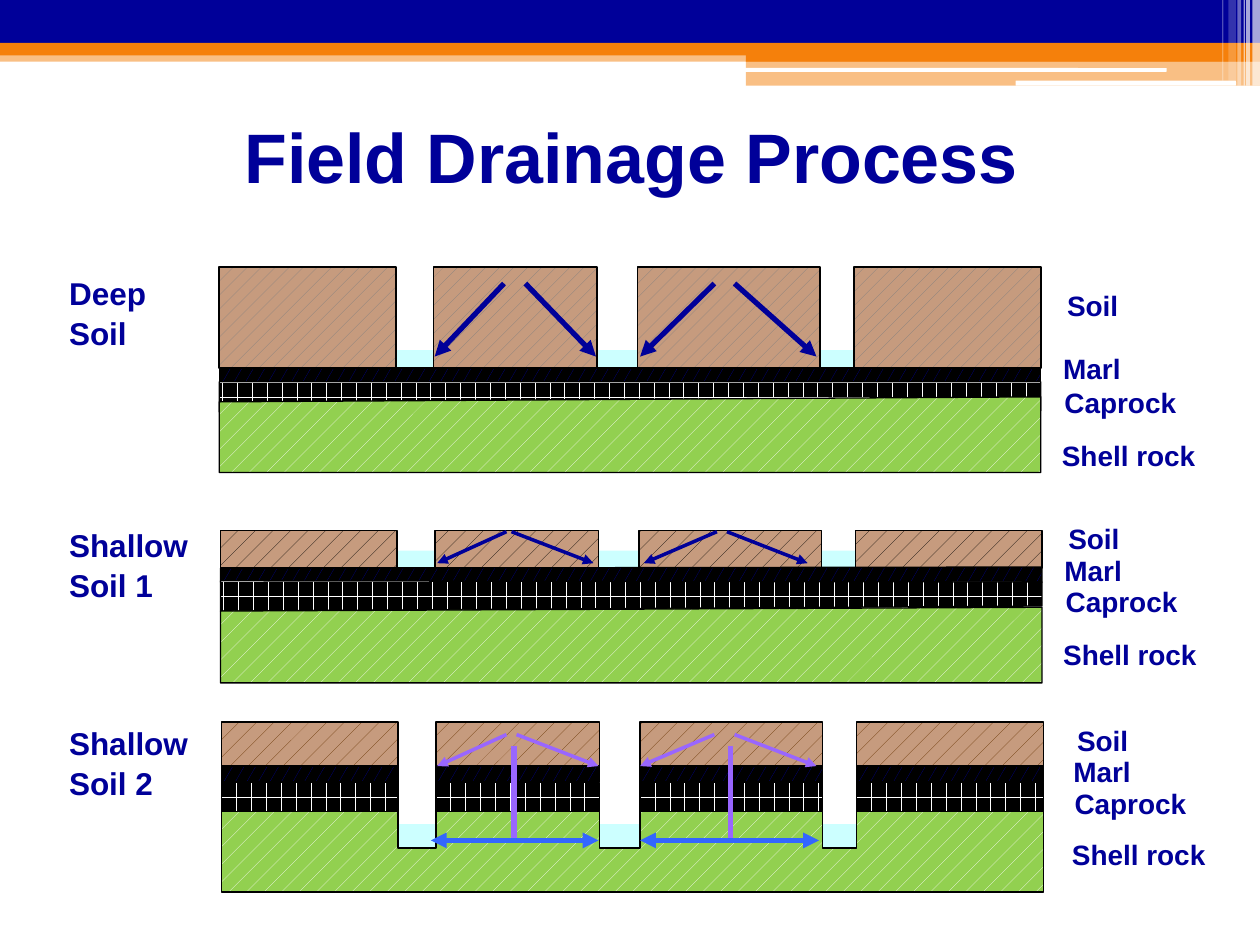
import pptx
import pptx.util
import pptx.dml.color
import pptx.enum.dml
import pptx.enum.shapes
import pptx.enum.text
import pptx.oxml
import pptx.oxml.ns
import lxml.etree

Inches = pptx.util.Inches
Pt = pptx.util.Pt
qn = pptx.oxml.ns.qn
KIND = pptx.enum.shapes.MSO_SHAPE
PAT = pptx.enum.dml.MSO_PATTERN
TEXT = pptx.enum.text

INK = {"navy": "000099", "orange": "F5800B", "white": "FFFFFF", "black": "000000",
       "water": "CCFFFF", "soil": "C69B7E", "gray": "808080", "brown": "663300",
       "green": "92D050", "violet": "9966FF", "blue": "3366FF"}
MARL = (PAT.SMALL_CONFETTI, "navy", "black")
BRICK = (PAT.HORIZONTAL_BRICK, "white", "black")
SHELL = (PAT.PERCENT_5, "white", "green")
BLOCKS = [(0, 1.4), (1.7, 3), (3.32, 4.77), (5.04, 6.52)]
WIDE = 6.52


def color(name):
    return pptx.dml.color.RGBColor.from_string(INK[name])


def assign(thing, values):
    for key, value in values.items():
        setattr(thing, key, value)


def paint(shape, fill, edge=None, alpha=None):
    shape.shadow.inherit = False
    if isinstance(fill, tuple):
        shape.fill.patterned()
        shape.fill.pattern = fill[0]
        shape.fill.fore_color.rgb = color(fill[1])
        shape.fill.back_color.rgb = color(fill[2])
    else:
        shape.fill.solid()
        shape.fill.fore_color.rgb = color(fill)
    if edge:
        shape.line.color.rgb = color("black")
        shape.line.width = Pt(edge)
    else:
        shape.line.fill.background()
    if alpha:
        tint = shape.element.spPr.find(".//" + qn("a:srgbClr"))
        lxml.etree.SubElement(tint, qn("a:alpha")).set("val", str(alpha * 1000))


def block(slide, box, fill, edge=None, alpha=None, kind=KIND.RECTANGLE):
    shape = slide.shapes.add_shape(kind, *map(Inches, box))
    paint(shape, fill, edge, alpha)


def outline(slide, left, top, points, fill, edge=0.75):
    spots = [(Inches(left + x), Inches(top + y)) for x, y in points]
    build = slide.shapes.build_freeform(*spots[0])
    build.add_line_segments(spots[1:], close=True)
    paint(build.convert_to_shape(), fill, edge)


def arrow(slide, start, end, ink, width, tip=True):
    line = slide.shapes.add_connector(pptx.enum.shapes.MSO_CONNECTOR.STRAIGHT,
                                      *map(Inches, start + end))
    line.line.color.rgb = color(ink)
    line.line.width = Pt(width)
    if tip:
        stroke = line.element.spPr.find(qn("a:ln"))
        lxml.etree.SubElement(stroke, qn("a:tailEnd")).set("type", "triangle")
    lxml.etree.SubElement(line.element.spPr, qn("a:effectLst"))


def write(shape, lines, size, wrap=False, inset=0.08, align=TEXT.PP_ALIGN.LEFT):
    frame = shape.text_frame
    frame.text = "\n".join(lines)
    assign(frame, {"word_wrap": wrap, "auto_size": TEXT.MSO_AUTO_SIZE.NONE,
                   "vertical_anchor": TEXT.MSO_ANCHOR.TOP, "margin_top": Inches(inset)})
    for para in frame.paragraphs:
        assign(para, {"alignment": align, "line_spacing": 1.05 if len(lines) > 1 else 1.0})
        assign(para.runs[0].font, {"name": "Arial", "size": Pt(size), "bold": True})
        para.runs[0].font.color.rgb = color("navy")


def label(slide, box, lines, size):
    write(slide.shapes.add_textbox(*map(Inches, box)), lines, size)


def header(slide, left, top, width):
    bars = [(0, 0.4, width, 0.09, "orange", 50), (0, 0, width, 0.34, "navy", None),
            (0, 0.34, width, 0.1, "orange", None), (5.92, 0.39, 4.08, 0.1, "orange", None),
            (5.92, 0.48, 4.08, 0.2, "orange", 50)]
    for x, y, w, h, ink, alpha in bars:
        block(slide, (left + x, top + y, w, h), ink, alpha=alpha)
    for x, y, w, h in [(5.91, 0.54, 3.35, 0.03), (8.06, 0.64, 1.75, 0.04)]:
        block(slide, (left + x, top + y, w, h), "white", kind=KIND.ROUNDED_RECTANGLE)
    stripes = [(9.94, 0.06, 0.68, 65), (9.89, 0.03, 0.68, 65), (9.87, 0.01, 0.68, 60),
               (9.82, 0.03, 0.68, 40), (9.75, 0.06, 0.64, 20), (9.7, 0.01, 0.64, 30)]
    for x, w, h, alpha in stripes:
        block(slide, (left + x, top, w, h), "white", alpha=alpha)


def heading(slide, box):
    title = slide.shapes.title
    assign(title, dict(zip(("left", "top", "width", "height"), map(Inches, box))))
    write(title, ["Field Drainage Process"], 40, True, 0.1, TEXT.PP_ALIGN.CENTER)


def comb(top, floor):
    points = []
    for start, end in BLOCKS:
        points += [(start, floor), (start, top), (end, top), (end, floor)]
    return points[1:-1]


def water(slide, left, top):
    for (_, start), (end, _) in zip(BLOCKS, BLOCKS[1:]):
        block(slide, (left + start - 0.02, top, end - start + 0.05, 0.2), "water")


def layers(slide, left, top, soil, floor, strata):
    water(slide, left, top + floor - 0.14)
    outline(slide, left, top, comb(0, floor) + [(WIDE, floor), (0, floor)], soil, 1)
    for fill, (a, b, c, d) in zip((MARL, BRICK, SHELL), strata):
        outline(slide, left, top, [(0, a), (WIDE, b), (WIDE, c), (0, d)], fill)


def trenches(slide, left, top, soil):
    water(slide, left, top + 0.81)
    outline(slide, left, top, comb(0, 1) + comb(0.48, 1)[::-1], soil)
    for fill, y, h in [(MARL, 0.35, 0.12), (BRICK, 0.48, 0.23)]:
        for start, end in BLOCKS:
            block(slide, (left + start, top + y, end - start, h), fill, 0.75)
    outline(slide, left, top, comb(0.71, 1) + [(WIDE, 1.35), (0, 1.35)], SHELL)


def names(slide, left, top, shift, drops, side, rise):
    label(slide, (0.45, top - rise, 1.16, 0.71), side, 18)
    parts = [("Soil", 6.63, 0.61), ("Marl", 6.6, 0.66), ("Caprock", 6.61, 1.1),
             ("Shell rock", 6.59, 1.27)]
    for (word, x, w), y in zip(parts, drops):
        label(slide, (left + x + shift, top + y, w, 0.37), [word], 16)


def seepage(slide, left, top, starts, ends, high, low, ink, width):
    for start, end in zip(starts, ends):
        arrow(slide, (left + start, top + high), (left + end, top + low), ink, width)


def outflow(slide, left, top):
    for x, start, end in [(2.32, 1.66, 2.99), (4.04, 3.32, 4.74)]:
        arrow(slide, (left + x, top + 0.19), (left + x, top + 0.94), "violet", 3, False)
        for tip in (start, end):
            arrow(slide, (left + x, top + 0.94), (left + tip, top + 0.94), "blue", 3)


def main():
    deck = pptx.Presentation()
    assign(deck, {"slide_width": Inches(10), "slide_height": Inches(7.5)})
    slide = deck.slides.add_slide(deck.slide_layouts[5])
    header(slide, 0, 0, 10)
    heading(slide, (0.01, 0.8, 10, 0.77))

    deep, thin, cut = (1.74, 2.12), (1.75, 4.21), (1.76, 5.73)
    layers(slide, *deep, (PAT.PERCENT_10, "gray", "soil"), 0.8,
           [(0.8, 0.8, 0.92, 0.92), (0.91, 0.91, 1.14, 1.15), (1.07, 1.03, 1.63, 1.63)])
    layers(slide, *thin, (PAT.PERCENT_5, "black", "soil"), 0.3,
           [(0.3, 0.29, 0.41, 0.41), (0.4, 0.41, 0.6, 0.64), (0.64, 0.61, 1.21, 1.21)])
    trenches(slide, *cut, (PAT.PERCENT_5, "brown", "soil"))

    names(slide, *deep, 0, (0.09, 0.59, 0.86, 1.28), ["Deep", "Soil"], 0.04)
    names(slide, *thin, 0, (-0.15, 0.1, 0.35, 0.77), ["Shallow", "Soil 1"], 0.13)
    names(slide, *cut, 0.06, (-0.07, 0.18, 0.43, 0.84), ["Shallow", "Soil 2"], 0.08)

    seepage(slide, *deep, (2.26, 2.43, 3.93, 4.09), (1.71, 2.99, 3.34, 4.74),
            0.13, 0.71, "navy", 3)
    seepage(slide, *thin, (2.27, 2.31, 3.94, 4.02), (1.72, 2.96, 3.36, 4.66),
            0.01, 0.26, "navy", 2)
    outflow(slide, *cut)
    seepage(slide, *cut, (2.26, 2.34, 3.91, 4.07), (1.71, 2.99, 3.32, 4.72),
            0.1, 0.35, "violet", 2)
    deck.save("out.pptx")


if __name__ == "__main__":
    main()
